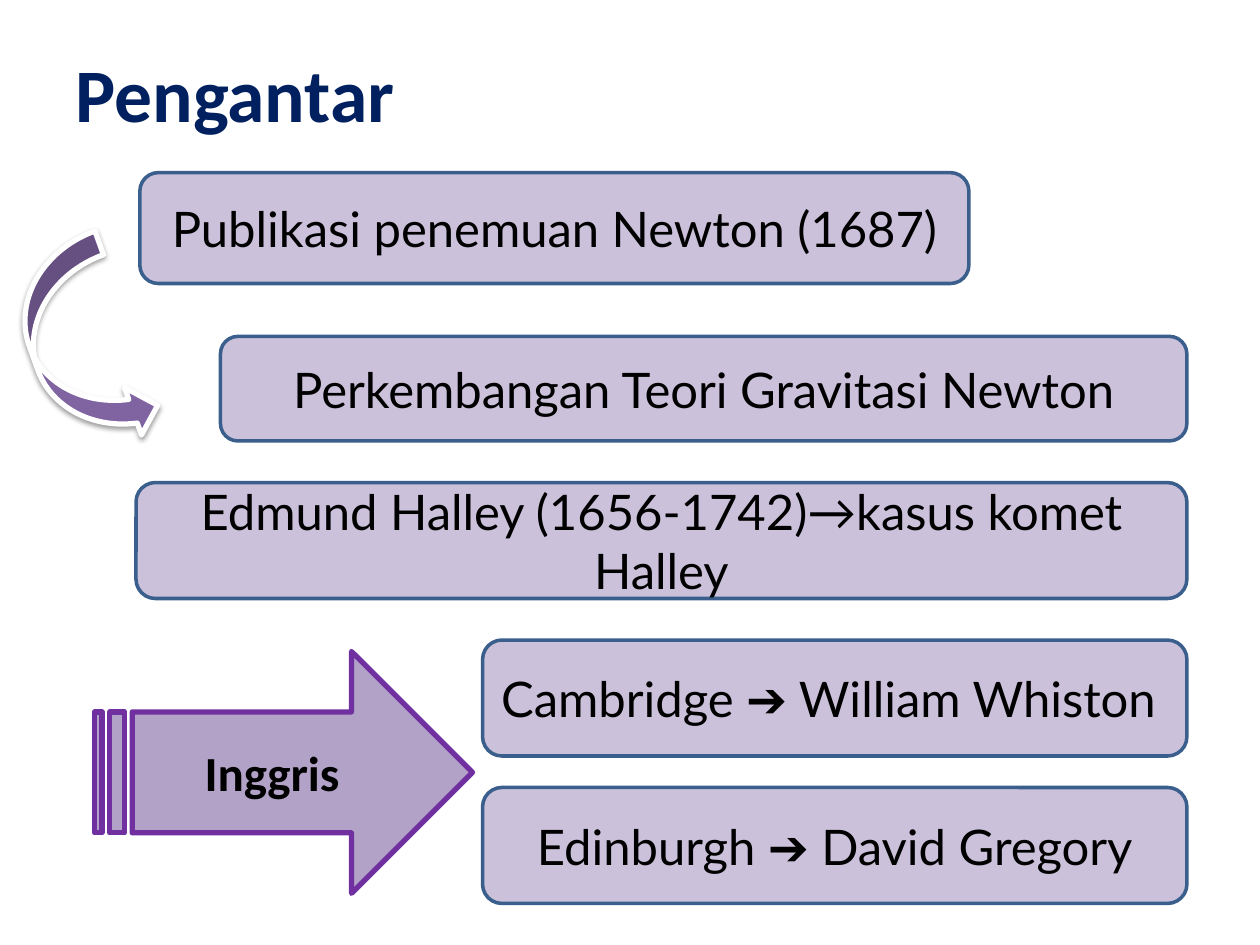
from lxml import etree
from pptx import Presentation
from pptx.dml.color import RGBColor
from pptx.enum.shapes import MSO_SHAPE
from pptx.enum.text import MSO_ANCHOR, MSO_AUTO_SIZE, PP_ALIGN
from pptx.oxml.ns import qn
from pptx.util import Inches, Pt

ROUNDED = MSO_SHAPE.ROUNDED_RECTANGLE
STRIPED_ARROW = MSO_SHAPE.STRIPED_RIGHT_ARROW
CURVED_ARROW = MSO_SHAPE.CURVED_RIGHT_ARROW
MIDDLE = MSO_ANCHOR.MIDDLE
NO_AUTOFIT = MSO_AUTO_SIZE.NONE
LEFT, CENTER = PP_ALIGN.LEFT, PP_ALIGN.CENTER

NAVY = RGBColor(0x00, 0x20, 0x60)
BLACK = RGBColor(0x00, 0x00, 0x00)
WHITE = RGBColor(0xFF, 0xFF, 0xFF)
LAVENDER = RGBColor(0xCC, 0xC1, 0xDA)
STEEL = RGBColor(0x3A, 0x5F, 0x8C)
MAUVE = RGBColor(0xB3, 0xA2, 0xC7)
VIOLET = RGBColor(0x70, 0x30, 0xA0)
PURPLE = RGBColor(0x80, 0x64, 0xA2)

TITLE = "Pengantar"
COUNTRY = "Inggris"
RIGHT_EDGE = 9.42
TOPICS = [
    ("Publikasi penemuan Newton (1687)", 1.11, 1.37, 7.69, 0.88),
    ("Perkembangan Teori Gravitasi Newton", 1.75, 2.67, RIGHT_EDGE, 0.83),
    ("Edmund Halley (1656-1742)→kasus komet Halley", 1.08, 3.83, RIGHT_EDGE, 0.92),
    ("Cambridge ➔ William Whiston ", 3.83, 5.08, RIGHT_EDGE, 0.92),
    ("Edinburgh ➔ David Gregory", 3.83, 6.25, RIGHT_EDGE, 0.92),
]


def write(shape, text, font="Lato", size=28, color=BLACK, bold=False, align=CENTER):
    frame = shape.text_frame
    frame.word_wrap = True
    frame.auto_size = NO_AUTOFIT
    frame.vertical_anchor = MIDDLE
    paragraph = frame.paragraphs[0]
    paragraph.alignment = align
    run = paragraph.add_run()
    run.text = text
    run.font.name = font
    run.font.size = Pt(size)
    run.font.bold = bold
    run.font.color.rgb = color


def draw(slide, kind, box, fill, line, width):
    shape = slide.shapes.add_shape(kind, *map(Inches, box))
    shape.shadow.inherit = False
    shape.fill.solid()
    shape.fill.fore_color.rgb = fill
    shape.line.color.rgb = line
    shape.line.width = Pt(width)
    return shape


def cast_shadow(shape, blur, distance, angle, opacity):
    effects = shape.element.spPr.find(qn("a:effectLst"))
    shadow = etree.SubElement(
        effects, qn("a:outerShdw"), blurRad=str(Pt(blur)), dist=str(Pt(distance)),
        dir=str(angle * 60000), rotWithShape="0")
    color = etree.SubElement(shadow, qn("a:srgbClr"), val=str(BLACK))
    etree.SubElement(color, qn("a:alpha"), val=str(opacity * 1000))


def main():
    deck = Presentation()
    deck.slide_width, deck.slide_height = Inches(10), Inches(7.5)
    slide = deck.slides.add_slide(deck.slide_layouts[5])

    title = slide.shapes.title
    title.left, title.top = Inches(0.5), Inches(0.3)
    title.width, title.height = Inches(9), Inches(0.87)
    write(title, TITLE, font="Calibri", size=43.2, color=NAVY, bold=True, align=LEFT)

    for text, left, top, right, height in TOPICS:
        topic = draw(slide, ROUNDED, (left, top, right - left, height), LAVENDER, STEEL, 2)
        write(topic, text)

    turn = draw(slide, CURVED_ARROW, (0.26, 1.92, 0.8, 1.67), PURPLE, WHITE, 3)
    turn.rotation = 340.2
    cast_shadow(turn, blur=3.1, distance=1.6, angle=90, opacity=38)

    country = draw(slide, STRIPED_ARROW, (0.75, 5.17, 3, 1.92), MAUVE, VIOLET, 3)
    write(country, COUNTRY, font="Calibri", bold=True)

    deck.save("out.pptx")


if __name__ == "__main__":
    main()
